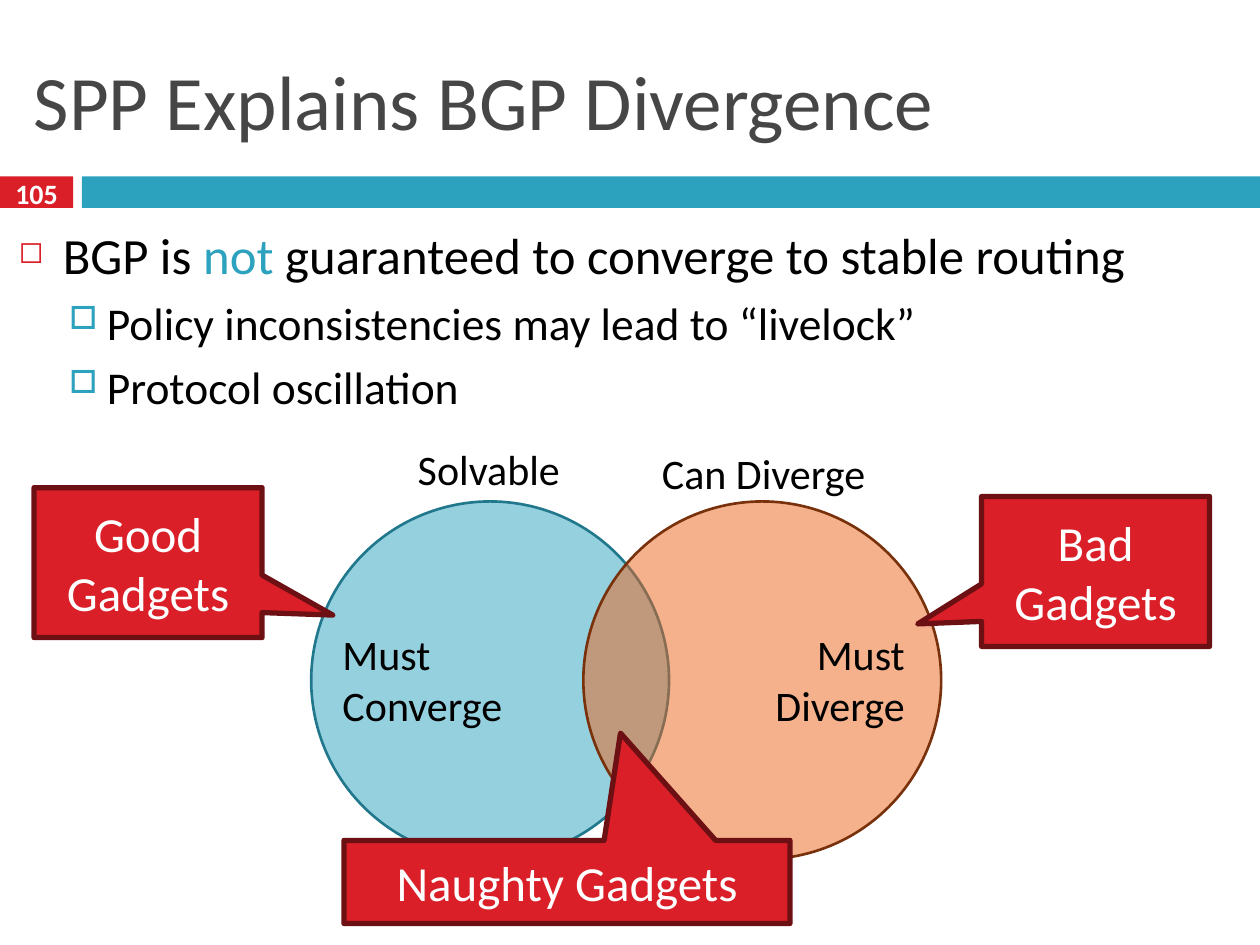
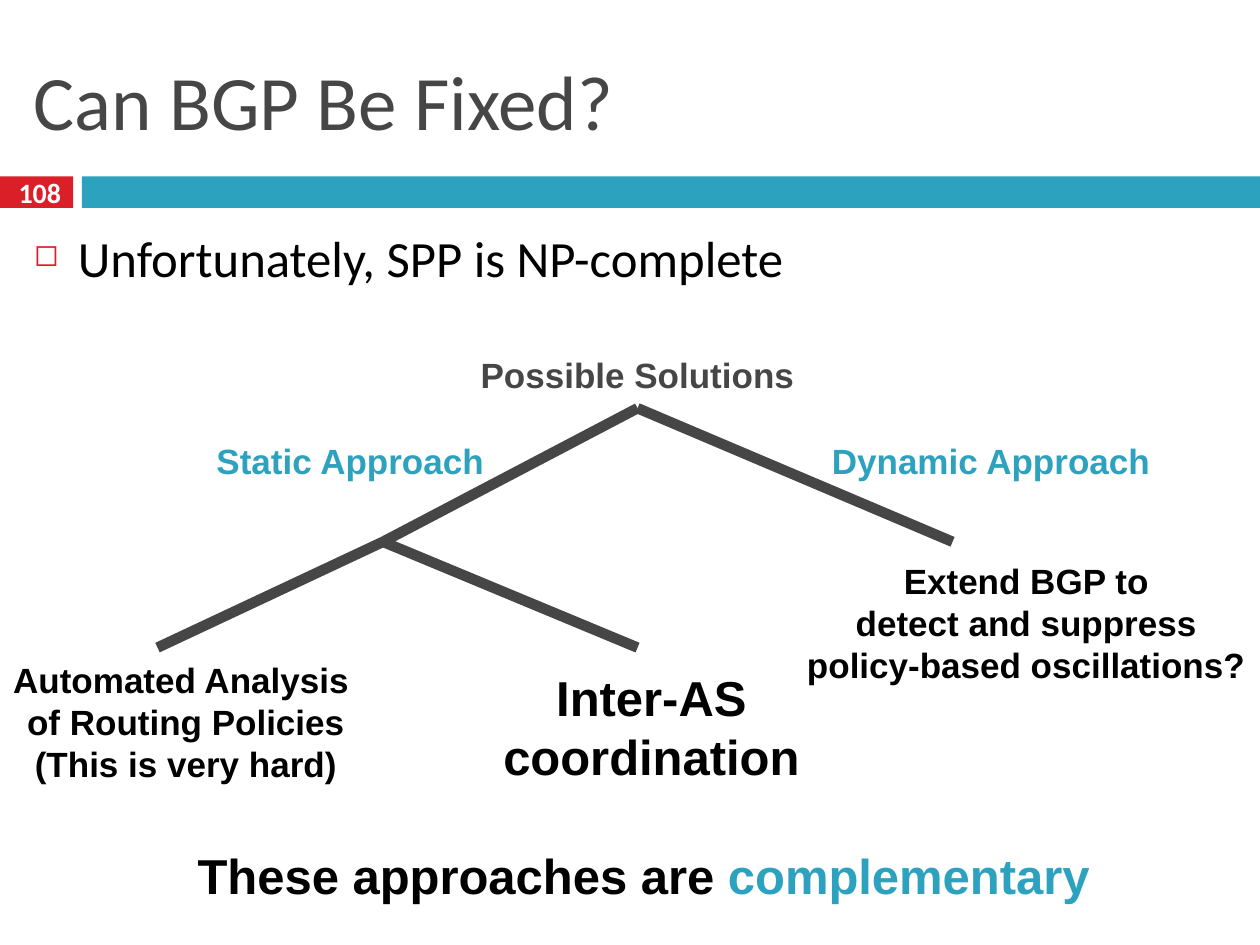
from dataclasses import dataclass

from lxml import etree
from pptx import Presentation
from pptx.dml.color import RGBColor
from pptx.enum.shapes import MSO_CONNECTOR, MSO_SHAPE
from pptx.enum.text import MSO_ANCHOR, PP_ALIGN
from pptx.oxml.ns import qn
from pptx.util import Inches, Pt

RECT, OVAL, CALL = MSO_SHAPE.RECTANGLE, MSO_SHAPE.OVAL, MSO_SHAPE.RECTANGULAR_CALLOUT
LINE = MSO_CONNECTOR.STRAIGHT
LEFT, MID, RIGHT = PP_ALIGN.LEFT, PP_ALIGN.CENTER, PP_ALIGN.RIGHT
TOP, CENTER = MSO_ANCHOR.TOP, MSO_ANCHOR.MIDDLE

WIDE, HIGH = Inches(10), Inches(7.5)
COLS, ROWS = 100, 75
HEX = {
    "red": "DA1F28", "maroon": "6D1014", "teal": "2DA2BF", "sea": "21788D",
    "orange": "EB641B", "brown": "78310B", "gray": "464646",
    "black": "000000", "white": "FFFFFF",
}
FONTS = {
    "title": {"name": "Calibri", "size": Pt(44)},
    "page": {"name": "Calibri", "size": Pt(16), "bold": True},
    "point": {"name": "Calibri", "size": Pt(29)},
    "detail": {"name": "Calibri", "size": Pt(26)},
    "gadget": {"name": "Calibri", "size": Pt(28)},
    "set": {"name": "Calibri", "size": Pt(24)},
    "node": {"name": "Arial", "size": Pt(20), "bold": True},
    "strong": {"name": "Arial", "size": Pt(28), "bold": True},
}
Spot = tuple[float, float]
Box = tuple[float, float, float, float]


@dataclass(frozen=True)
class Label:
    text: str
    box: Box
    font: str
    color: str = "black"
    align: PP_ALIGN = MID
    anchor: MSO_ANCHOR = TOP


@dataclass(frozen=True)
class Form:
    kind: MSO_SHAPE
    box: Box
    fill: str
    edge: str = ""
    width: float = 0
    alpha: int = 100
    tip: Spot = ()
    text: str = ""


@dataclass(frozen=True)
class Level:
    font: str
    mark: str
    color: str
    share: int
    left: float
    hang: float
    gap: float


LEVELS = (
    Level("point", "◻", "red", 60, 0.35, 0.35, 7),
    Level("detail", "□", "teal", 70, 0.7, 0.3, 5.5),
)
BANDS = (
    Form(RECT, (0, 14, 5.8, 2.5), "red"),
    Form(RECT, (6.5, 14, 93.5, 2.5), "teal"),
)
DISK, EDGE = 28.4, 3
VENN = (
    Form(OVAL, (24.7, 39.8, DISK, DISK), "teal", "sea", 1.5, 50),
    Form(OVAL, (46.3, 39.8, DISK, DISK), "orange", "brown", 1.5, 50),
)
SETS = (
    Label("Must\nConverge", (26.2, 49.4, 16.6, 9.1), "set", align=LEFT),
    Label("Must\nDiverge", (59.2, 49.4, 13.6, 9.1), "set", align=RIGHT),
    Label("Solvable", (31.3, 34.7, 15, 5), "set"),
    Label("Can Diverge", (50.2, 35, 20.8, 5), "set"),
)
GADGETS = tuple(
    Form(CALL, box, "red", "maroon", EDGE, tip=tip, text=text)
    for text, box, tip in (
        ("Good Gadgets", (2.7, 38.7, 18.1, 11.9), (0.81, 0.35)),
        ("Bad Gadgets", (77.9, 39.4, 18.1, 11.9), (-0.78, 0.35)),
        ("Naughty Gadgets", (27.3, 66.7, 35.4, 6.6), (0.12, -1.79)),
    )
)
ROOT = Label("Possible Solutions", (34.8, 27.6, 31.6, 4.8), "node", "gray")
NODES = (
    Label("Static Approach", (15.1, 34.4, 25.4, 4.4), "node", "teal"),
    Label("Dynamic Approach", (64.9, 34.4, 27.5, 4.4), "node", "teal"),
    Label("Inter-AS\ncoordination", (38.9, 52.5, 25.6, 10.3), "strong"),
    Label("Automated Analysis \nof Routing Policies\n(This is very hard)",
          (0, 51.8, 29.5, 11), "node"),
    Label("Extend BGP to\ndetect and suppress\npolicy-based oscillations?",
          (62.6, 43.9, 37.7, 11.1), "node"),
    Label("These approaches are *complementary*",
          (14.7, 66.6, 73, 5.7), "strong", align=LEFT),
)
PEAK, FORK = (50.6, 32.4), (30.4, 43)
TREE = (
    (PEAK, FORK), (PEAK, (75.6, 43)),
    (FORK, (12.5, 51.4)), (FORK, (50.6, 51.4)),
)


def col(count: float) -> int:
    return round(WIDE * count / COLS)


def row(count: float) -> int:
    return round(HIGH * count / ROWS)


def place(box: Box) -> tuple[int, int, int, int]:
    left, top, width, height = box
    return col(left), row(top), col(width), row(height)


def tint(name: str) -> RGBColor:
    return RGBColor.from_string(HEX[name])


def write(para, text: str, font: str, color: str) -> None:
    for rank, piece in enumerate(text.split("*")):
        if piece:
            run = para.add_run()
            run.text = piece
            for key, value in FONTS[font].items():
                setattr(run.font, key, value)
            run.font.color.rgb = tint("teal" if rank % 2 else color)


def add_lines(frame, text: str, font: str, color: str, align: PP_ALIGN) -> None:
    for rank, line in enumerate(text.split("\n")):
        para = frame.add_paragraph() if rank else frame.paragraphs[0]
        para.alignment = align
        write(para, line, font, color)


def add_label(slide, item: Label):
    shape = slide.shapes.add_textbox(*place(item.box))
    frame = shape.text_frame
    frame.word_wrap = False
    frame.vertical_anchor = item.anchor
    add_lines(frame, item.text, item.font, item.color, item.align)
    return shape


def add_form(slide, item: Form) -> None:
    shape = slide.shapes.add_shape(item.kind, *place(item.box))
    shape.shadow.inherit = False
    shape.fill.solid()
    shape.fill.fore_color.rgb = tint(item.fill)
    if item.alpha < 100:
        color = shape.fill._xPr.find(f"{qn('a:solidFill')}/{qn('a:srgbClr')}")
        etree.SubElement(color, qn("a:alpha"), val=str(item.alpha * 1000))
    if item.edge:
        shape.line.color.rgb = tint(item.edge)
        shape.line.width = Pt(item.width)
    else:
        shape.line.fill.background()
    for rank, value in enumerate(item.tip):
        shape.adjustments[rank] = value
    if item.text:
        shape.text_frame.word_wrap = True
        add_lines(shape.text_frame, item.text, "gadget", "white", MID)


def add_points(slide, box: Box, points: tuple[tuple[int, str], ...]) -> None:
    frame = slide.shapes.add_textbox(*place(box)).text_frame
    frame.word_wrap = True
    for rank, (depth, text) in enumerate(points):
        para = frame.add_paragraph() if rank else frame.paragraphs[0]
        level = LEVELS[depth]
        para.level = depth
        para.space_before = Pt(level.gap)
        props = para._p.get_or_add_pPr()
        props.set("marL", str(Inches(level.left)))
        props.set("indent", str(-Inches(level.hang)))
        color = etree.SubElement(props, qn("a:buClr"))
        etree.SubElement(color, qn("a:srgbClr"), val=HEX[level.color])
        etree.SubElement(props, qn("a:buSzPct"), val=str(level.share * 1000))
        etree.SubElement(props, qn("a:buChar"), char=level.mark)
        write(para, text, level.font, "black")


def add_branch(slide, start: Spot, end: Spot, root) -> None:
    ends = col(start[0]), row(start[1]), col(end[0]), row(end[1])
    line = slide.shapes.add_connector(LINE, *ends)
    line.line.color.rgb = tint("gray")
    line.line.width = Pt(6)
    etree.SubElement(line._element.spPr, qn("a:effectLst"))
    if start == PEAK:
        line.begin_connect(root, 2)


def add_base(deck, title: str, page: str, box: Box):
    slide = deck.slides.add_slide(deck.slide_layouts[6])
    for band in BANDS:
        add_form(slide, band)
    add_label(slide, Label(title, (1.7, 2.5, 96.7, 10.8), "title", "gray", LEFT, CENTER))
    add_label(slide, Label(page, box, "page", "white", anchor=CENTER))
    return slide


def add_venn(deck) -> None:
    slide = add_base(deck, "SPP Explains BGP Divergence", "105", (0, 13.7, 5.8, 3.3))
    add_points(slide, (0.5, 17.3, 98.3, 17.4), (
        (0, "BGP is *not* guaranteed to converge to stable routing"),
        (1, "Policy inconsistencies may lead to “livelock”"),
        (1, "Protocol oscillation"),
    ))
    for disk in VENN:
        add_form(slide, disk)
    for label in SETS:
        add_label(slide, label)
    for gadget in GADGETS:
        add_form(slide, gadget)


def add_tree(deck) -> None:
    slide = add_base(deck, "Can BGP Be Fixed?", "108", (-0.1, 13.8, 6.5, 2.9))
    add_points(slide, (1.7, 17.5, 96.7, 6.7), ((0, "Unfortunately, SPP is NP-complete"),))
    root = add_label(slide, ROOT)
    for start, end in TREE:
        add_branch(slide, start, end, root)
    for node in NODES:
        add_label(slide, node)


def main() -> None:
    deck = Presentation()
    deck.slide_width, deck.slide_height = WIDE, HIGH
    add_venn(deck)
    add_tree(deck)
    deck.save("out.pptx")


if __name__ == "__main__":
    main()
